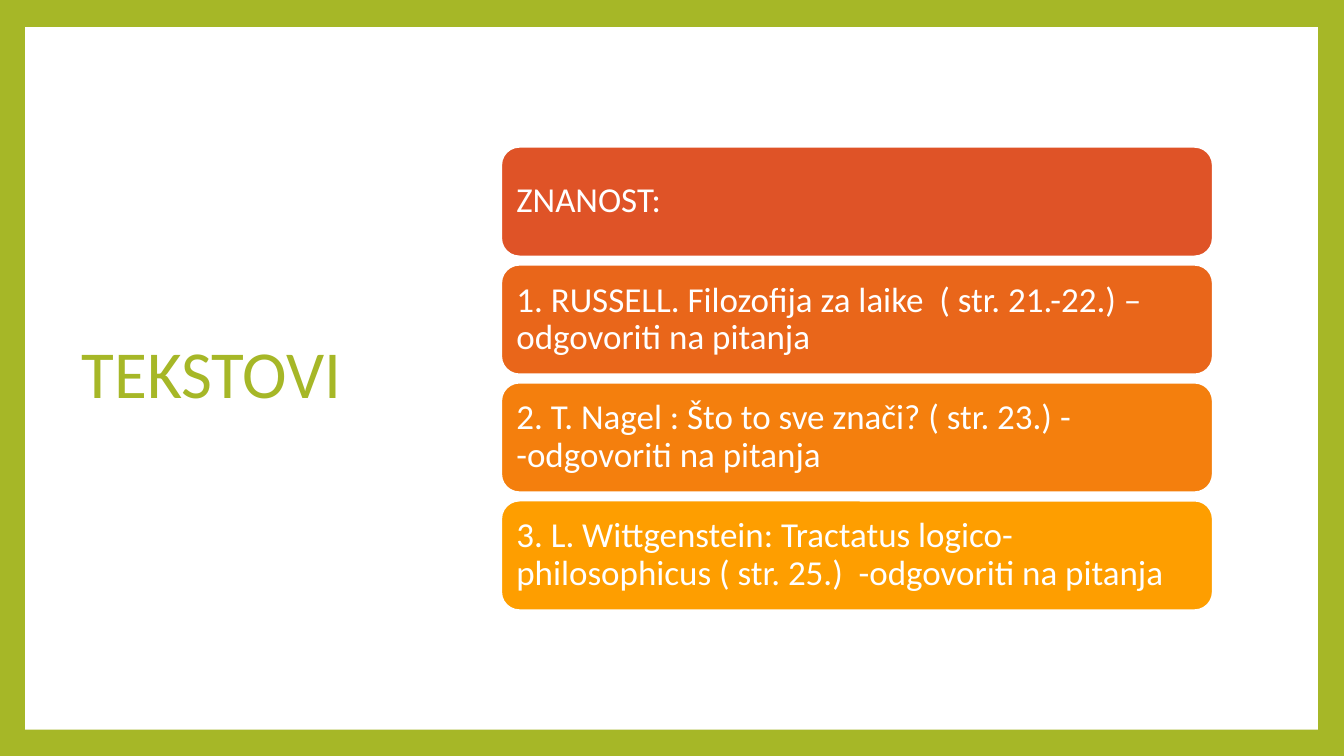
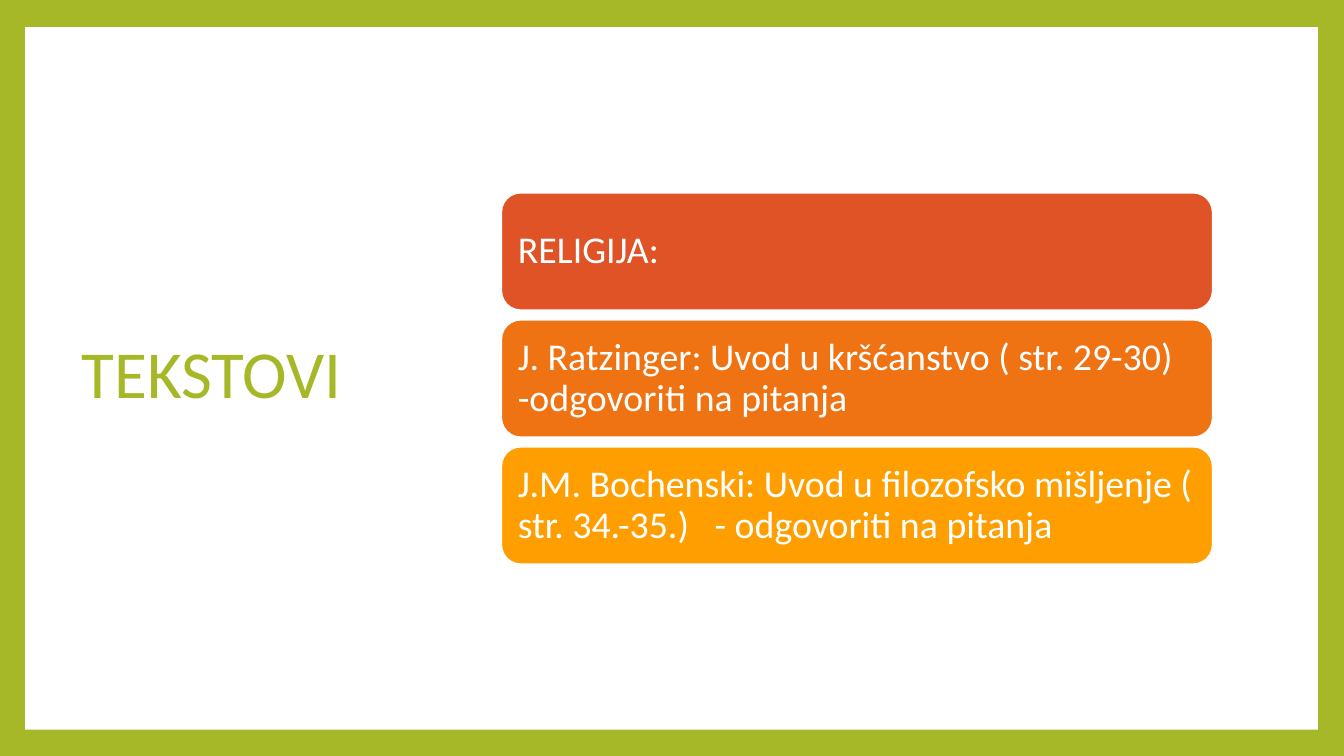
import pptx
import pptx.dml.color
import pptx.enum.shapes
import pptx.enum.text
import pptx.util

Inches = pptx.util.Inches

GREEN = "A6B727"
WHITE = "FFFFFF"
FONT = "Calibri"

# Boxes: left, top, width, height in inches
PANEL_BOX = (0.25, 0.27, 12.82, 6.97)
TITLE_BOX = (0.71, 0.67, 3.68, 6.13)
CARDS_BOX = (4.97, 0.69, 7.06, 6.13)

SLIDES = [
    {
        "title": "TEKSTOVI",
        "cards": [
            ("ZNANOST:", "DF5327"),
            ("1. RUSSELL. Filozofija za laike  ( str. 21.-22.) –odgovoriti na pitanja", "E9661A"),
            ("2. T. Nagel : Što to sve znači? ( str. 23.) - -odgovoriti na pitanja", "F47F0D"),
            ("3. L. Wittgenstein: Tractatus logico-philosophicus ( str. 25.)  -odgovoriti na pitanja", "FE9E00"),
        ],
        "card_style": {"height": 1.09, "gap": 0.08, "size": 25, "inset": 0.1},
    },
    {
        "title": "TEKSTOVI",
        "cards": [
            ("RELIGIJA:", "DF5327"),
            ("J. Ratzinger: Uvod u kršćanstvo ( str. 29-30)  -odgovoriti na pitanja", "EF7213"),
            ("J.M. Bochenski: Uvod u filozofsko mišljenje ( str. 34.-35.)   - odgovoriti na pitanja", "FE9E00"),
        ],
        "card_style": {"height": 1.17, "gap": 0.09, "size": 27, "inset": 0.11},
    },
]


def set_color(fill, color):
    fill.solid()
    fill.fore_color.rgb = pptx.dml.color.RGBColor.from_string(color)


def write_text(shape, text, *, size, color, inset_x=0.1, inset_y=0.05):
    frame = shape.text_frame
    frame.word_wrap = True
    frame.vertical_anchor = pptx.enum.text.MSO_ANCHOR.MIDDLE
    frame.margin_left = frame.margin_right = Inches(inset_x)
    frame.margin_top = frame.margin_bottom = Inches(inset_y)
    paragraph = frame.paragraphs[0]
    paragraph.alignment = pptx.enum.text.PP_ALIGN.LEFT
    paragraph.line_spacing = 0.9
    run = paragraph.add_run()
    run.text = text
    run.font.name = FONT
    run.font.size = pptx.util.Pt(size)
    set_color(run.font.fill, color)


def add_filled_shape(slide, kind, box, color):
    shape = slide.shapes.add_shape(kind, *map(Inches, box))
    shape.shadow.inherit = False
    set_color(shape.fill, color)
    shape.line.fill.background()
    return shape


def add_panel(slide, box):
    add_filled_shape(slide, pptx.enum.shapes.MSO_SHAPE.RECTANGLE, box, WHITE)


def add_title(slide, box, text):
    title = slide.shapes.add_textbox(*map(Inches, box))
    write_text(title, text, size=48, color=GREEN)


def add_cards(slide, box, cards, *, height, gap, size, inset):
    """Stack equal cards, centred vertically in the box."""
    left, box_top, width, box_height = box
    pitch = height + gap
    first_top = box_top + (box_height - len(cards) * pitch + gap) / 2
    for index, (text, color) in enumerate(cards):
        card_box = (left, first_top + index * pitch, width, height)
        card = add_filled_shape(
            slide, pptx.enum.shapes.MSO_SHAPE.ROUNDED_RECTANGLE, card_box, color)
        set_color(card.line.fill, WHITE)
        card.line.width = pptx.util.Pt(1.5)
        write_text(card, text, size=size, color=WHITE, inset_x=inset, inset_y=inset)


def add_text_list_slide(presentation, content):
    slide = presentation.slides.add_slide(presentation.slide_layouts[6])
    add_panel(slide, PANEL_BOX)
    add_title(slide, TITLE_BOX, content["title"])
    add_cards(slide, CARDS_BOX, content["cards"], **content["card_style"])


def main():
    presentation = pptx.Presentation()
    presentation.slide_width = Inches(13.33)
    presentation.slide_height = Inches(7.5)
    # Green frame shared by all slides
    set_color(presentation.slide_master.background.fill, GREEN)
    for content in SLIDES:
        add_text_list_slide(presentation, content)
    presentation.save("out.pptx")


if __name__ == "__main__":
    main()
